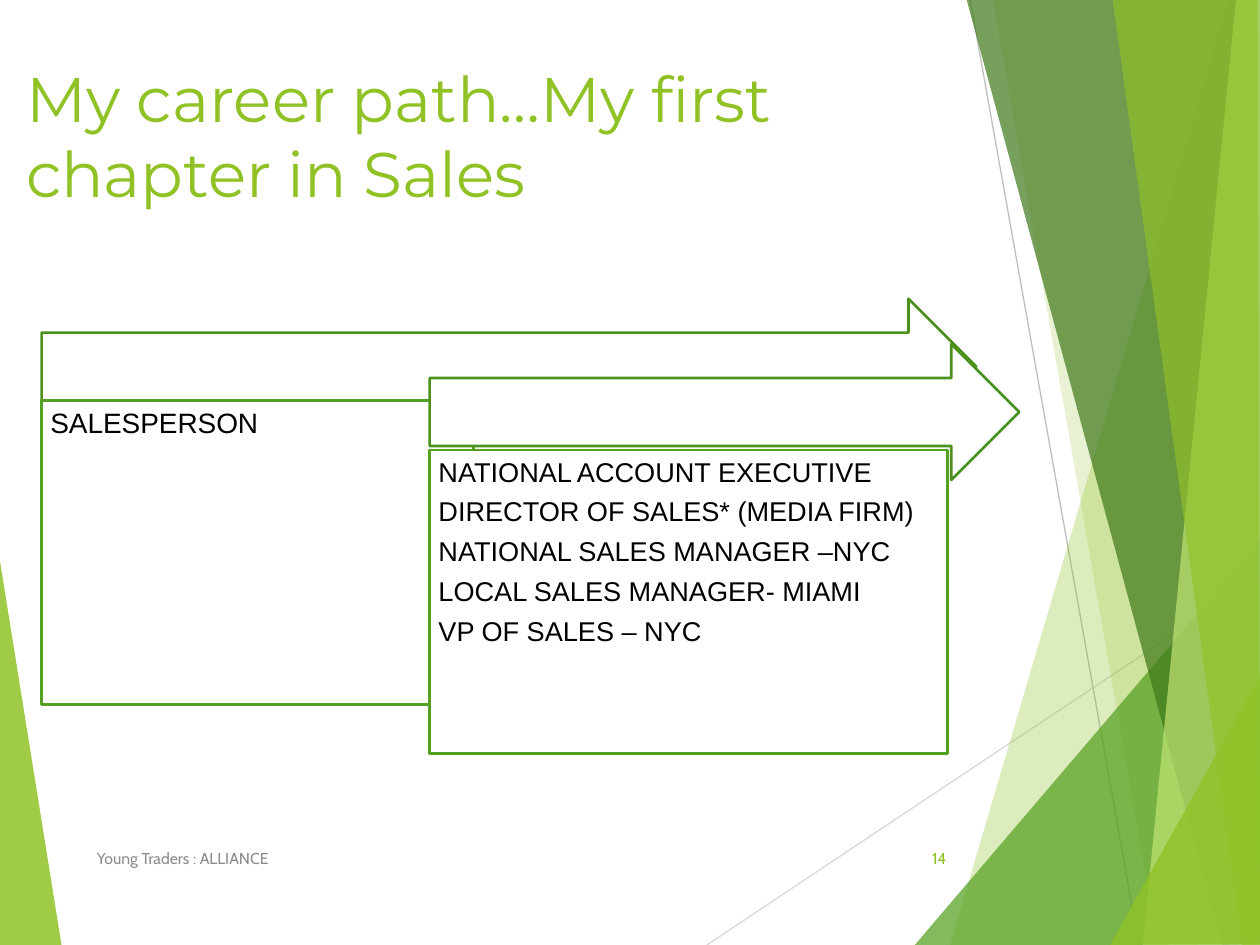
from lxml.etree import SubElement
from pptx import Presentation
from pptx.dml.color import RGBColor
from pptx.enum.shapes import MSO_CONNECTOR, MSO_SHAPE
from pptx.enum.text import MSO_ANCHOR, PP_ALIGN
from pptx.oxml.ns import qn
from pptx.util import Inches, Pt

WHITE = RGBColor(0xFF, 0xFF, 0xFF)
BLACK = RGBColor(0x00, 0x00, 0x00)
GRAY = RGBColor(0x8C, 0x8C, 0x8C)
LIGHT_GRAY = RGBColor(0xD9, 0xD9, 0xD9)
SILVER = RGBColor(0xBF, 0xBF, 0xBF)
LIME = RGBColor(0x90, 0xC2, 0x26)
PALE_LIME = RGBColor(0xC0, 0xE4, 0x74)
GREEN = RGBColor(0x54, 0xA0, 0x21)
ARROW_GREEN = RGBColor(0x4C, 0x91, 0x1E)
DARK_GREEN = RGBColor(0x3F, 0x78, 0x19)

LEFT_FACET = ([(-0.01, 4.39), (0.49, 7.51), (-0.01, 7.5)], LIME, 85)
RIGHT_FACETS = [
    ([(9.75, 0), (7.54, 7.5), (10.02, 7.51), (10.01, 0.01)], LIME, 30),
    ([(7.88, -0.01), (9.19, 7.5), (10.01, 7.5), (10.01, -0.01)], LIME, 20),
    ([(7.26, 7.5), (10, 4.29), (10.01, 7.5)], GREEN, 72),
    ([(7.67, -0.01), (9.7, 7.5), (10.01, 7.49), (10.01, -0.01)], DARK_GREEN, 70),
    ([(9.81, -0.01), (9.07, 7.5), (10.01, 7.5), (10, -0.01)], PALE_LIME, 70),
    ([(8.83, -0.01), (9.86, 7.5), (10, 7.5), (9.98, -0.01)], LIME, 65),
    ([(8.81, 7.5), (10.01, 5.35), (10.01, 7.49)], LIME, 80),
]
SALES_ROLES = [
    "NATIONAL ACCOUNT EXECUTIVE",
    "DIRECTOR OF SALES* (MEDIA FIRM)",
    "NATIONAL SALES MANAGER –NYC",
    "LOCAL SALES MANAGER- MIAMI",
    "VP OF SALES – NYC",
]


def write_text(text_frame, lines, *, font, size, color, align=PP_ALIGN.LEFT,
               anchor=MSO_ANCHOR.TOP, margin=None, line_spacing=None, space_after=None):
    text_frame.word_wrap = True
    text_frame.vertical_anchor = anchor
    if margin is not None:
        text_frame.margin_left = text_frame.margin_right = Inches(margin)
        text_frame.margin_top = text_frame.margin_bottom = Inches(margin)
    for index, line in enumerate(lines):
        paragraph = text_frame.paragraphs[0] if index == 0 else text_frame.add_paragraph()
        paragraph.alignment = align
        paragraph.line_spacing = line_spacing
        if space_after is not None:
            paragraph.space_after = Pt(space_after)
        run = paragraph.add_run()
        run.text = line
        run.font.name = font
        run.font.size = Pt(size)
        run.font.color.rgb = color


class SlideBuilder:
    heading_font = "Montserrat"
    footer_font = "Cabin"
    body_font = "Arial"
    outline_width = Pt(1.5)

    def __init__(self, slide):
        self.slide = slide

    def facet(self, points, color, opacity):
        corners = [(Inches(x), Inches(y)) for x, y in points]
        builder = self.slide.shapes.build_freeform(*corners[0])
        builder.add_line_segments(corners[1:], close=True)
        shape = builder.convert_to_shape()
        shape.shadow.inherit = False
        shape.fill.solid()
        shape.fill.fore_color.rgb = color
        shape.line.fill.background()
        color_element = shape._element.spPr.find(f"{qn('a:solidFill')}/{qn('a:srgbClr')}")
        SubElement(color_element, qn("a:alpha")).set("val", str(opacity * 1000))

    def line(self, start, end, color):
        ends = [Inches(value) for value in (*start, *end)]
        connector = self.slide.shapes.add_connector(MSO_CONNECTOR.STRAIGHT, *ends)
        connector.line.color.rgb = color
        connector.line.width = Pt(0.75)
        SubElement(connector._element.spPr, qn("a:effectLst"))

    def text(self, box, content, **text_format):
        shape = self.slide.shapes.add_textbox(*map(Inches, box))
        write_text(shape.text_frame, [content], **text_format)

    def outlined(self, kind, box, color):
        shape = self.slide.shapes.add_shape(kind, *map(Inches, box))
        shape.shadow.inherit = False
        shape.fill.solid()
        shape.fill.fore_color.rgb = WHITE
        shape.line.color.rgb = color
        shape.line.width = self.outline_width
        return shape

    def arrow(self, box):
        self.outlined(MSO_SHAPE.RIGHT_ARROW, box, ARROW_GREEN)

    def role_panel(self, box, roles, size):
        shape = self.outlined(MSO_SHAPE.RECTANGLE, box, GREEN)
        write_text(shape.text_frame, roles, font=self.body_font, size=size, color=BLACK,
                   margin=0.07, line_spacing=0.9, space_after=6)


def main():
    presentation = Presentation()
    presentation.slide_width = Inches(10)
    presentation.slide_height = Inches(7.5)
    builder = SlideBuilder(presentation.slides.add_slide(presentation.slide_layouts[6]))

    builder.facet(*LEFT_FACET)
    builder.line((5.61, 7.5), (10.01, 4.57), LIGHT_GRAY)
    builder.line((7.7, 0), (9.04, 7.5), SILVER)
    for facet in RIGHT_FACETS:
        builder.facet(*facet)

    builder.text((0.11, 0.42, 6.94, 1.44), "My career path…My first chapter in Sales",
                 font=builder.heading_font, size=36, color=LIME)
    builder.text((0.67, 6.61, 5.06, 0.4), "Young Traders : ALLIANCE",
                 font=builder.footer_font, size=9, color=GRAY, anchor=MSO_ANCHOR.MIDDLE)
    builder.text((7.05, 6.61, 0.56, 0.4), "14", font=builder.footer_font, size=9,
                 color=LIME, align=PP_ALIGN.RIGHT, anchor=MSO_ANCHOR.MIDDLE)

    builder.arrow((0.33, 2.37, 7.42, 1.08))
    builder.role_panel((0.33, 3.18, 3.43, 2.41), ["SALESPERSON"], 16)
    builder.arrow((3.41, 2.73, 4.68, 1.08))
    builder.role_panel((3.41, 3.57, 4.11, 2.41), SALES_ROLES, 15.5)

    presentation.save("out.pptx")


if __name__ == "__main__":
    main()
